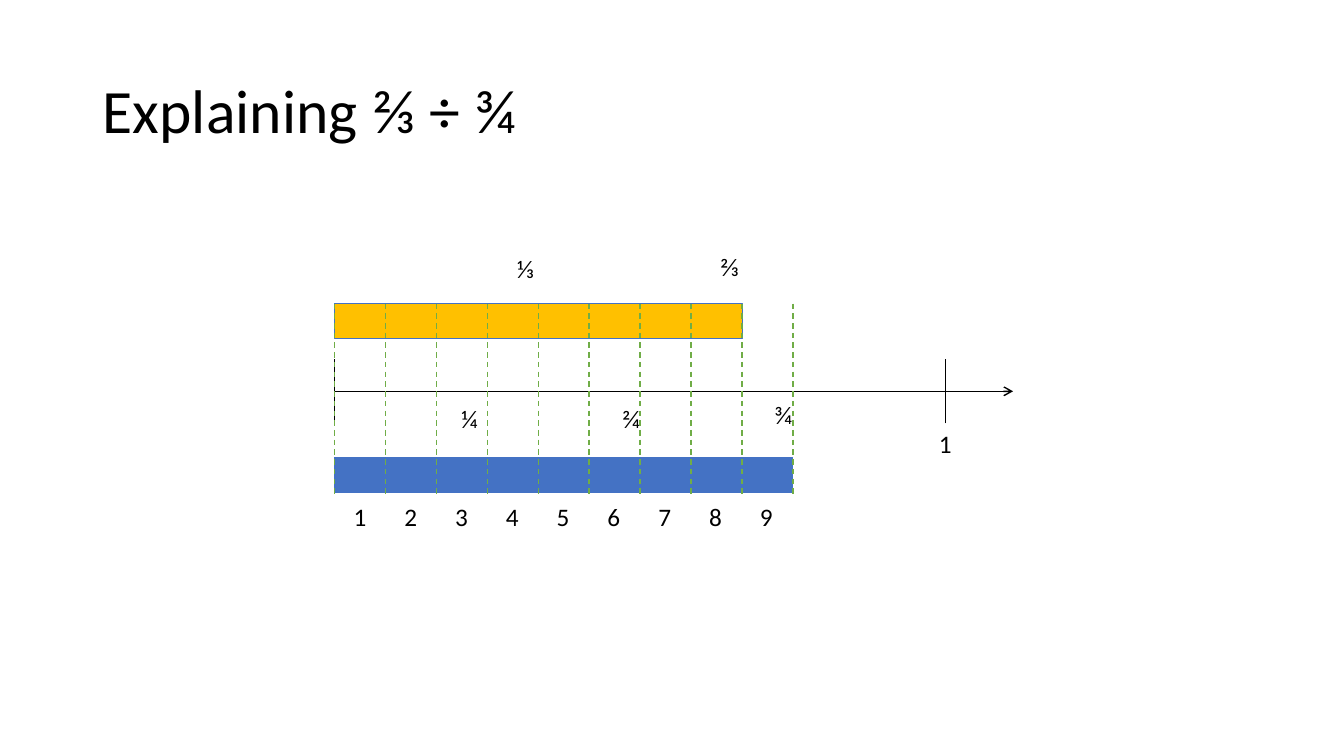
from dataclasses import dataclass

from pptx import Presentation
from pptx.dml.color import RGBColor
from pptx.enum.dml import MSO_LINE_DASH_STYLE as Dash
from pptx.enum.shapes import MSO_CONNECTOR as Connector, MSO_SHAPE as Shape
from pptx.enum.text import MSO_ANCHOR as Anchor, MSO_AUTO_SIZE as AutoSize, PP_ALIGN as Align
from pptx.oxml.ns import qn
from pptx.util import Cm, Pt
from lxml import etree


@dataclass(frozen=True)
class Theme:
    font: str = "Calibri"
    ink: str = "000000"
    dividend: str = "FFC000"
    divisor: str = "4472C4"
    guide: str = "70AD47"
    title_size: int = 44
    label_size: int = 18


class FractionSlide:
    def __init__(self, prs, theme):
        self.theme = theme
        self.slide = prs.slides.add_slide(prs.slide_layouts[5])
        self.shapes = self.slide.shapes

    def set_text(self, tf, text, size):
        tf.text = text
        p = tf.paragraphs[0]
        p.alignment = Align.LEFT
        for r in p.runs:
            r.font.name = self.theme.font
            r.font.size = Pt(size)
            r.font.color.rgb = RGBColor.from_string(self.theme.ink)
        return p

    def title(self, text, x, y, w, h):
        sp = self.shapes.title
        sp.left, sp.top, sp.width, sp.height = Cm(x), Cm(y), Cm(w), Cm(h)
        sp.text_frame.vertical_anchor = Anchor.MIDDLE
        p = self.set_text(sp.text_frame, text, self.theme.title_size)
        p.line_spacing = 0.9

    def label(self, text, x, y, w):
        sp = self.shapes.add_textbox(Cm(x), Cm(y), Cm(w), Cm(1.02))
        tf = sp.text_frame
        tf.word_wrap = False
        tf.auto_size = AutoSize.SHAPE_TO_FIT_TEXT
        self.set_text(tf, text, self.theme.label_size)

    def bar(self, x, y, w, h, color):
        sp = self.shapes.add_shape(Shape.RECTANGLE, Cm(x), Cm(y), Cm(w), Cm(h))
        sp.shadow.inherit = False
        sp.fill.solid()
        sp.fill.fore_color.rgb = RGBColor.from_string(color)
        sp.line.color.rgb = RGBColor.from_string(self.theme.divisor)
        sp.line.width = Pt(0.5)
        return sp

    def line(self, x1, y1, x2, y2, color, dashed=False, arrow=False):
        cxn = self.shapes.add_connector(Connector.STRAIGHT, Cm(x1), Cm(y1), Cm(x2), Cm(y2))
        cxn.line.color.rgb = RGBColor.from_string(color)
        cxn.line.width = Pt(1)
        if dashed:
            cxn.line.dash_style = Dash.DASH
        sp_pr = cxn._element.spPr
        if arrow:
            etree.SubElement(sp_pr.find(qn("a:ln")), qn("a:tailEnd"), type="arrow")
        etree.SubElement(sp_pr, qn("a:effectLst"))
        return cxn


def main():
    prs = Presentation()
    prs.slide_width, prs.slide_height = Cm(33.87), Cm(19.05)
    theme = Theme()
    s = FractionSlide(prs, theme)
    s.title("Explaining ⅔ ÷ ¾", 2.34, 1.02, 29.21, 3.68)

    # Number line from 0 to 1, split into twelfths
    zero, unit, axis_y = 8.43, 15.4, 9.86
    twelfth = unit / 12
    s.line(zero, axis_y, 25.53, axis_y, theme.ink, arrow=True)
    for x in (zero, zero + unit):
        s.line(x, axis_y + 0.81, x, axis_y - 0.81, theme.ink)
    s.label("1", zero + unit - 0.42, 10.67, 0.84)

    # Bars for two thirds and three quarters
    bar_top, bar_height = 7.65, 0.87
    dividend = s.bar(zero, bar_top, unit * 2 / 3, bar_height, theme.dividend)
    s.bar(zero, 11.53, unit * 3 / 4, bar_height, theme.divisor)

    # Fraction labels
    for text, x, y in (("1⁄3", 12.78, 6.25), ("2⁄3", 17.91, 6.2),
                       ("1⁄4", 11.38, 10.03), ("2⁄4", 15.44, 10.03),
                       ("3⁄4", 19.28, 9.93)):
        s.label(text, x, y, 1.37)

    # Guides at every twelfth; the fifth starts at the middle of the upper bar
    for i in range(10):
        x = zero + i * twelfth
        guide = s.line(x, bar_top, x, 12.45, theme.guide, dashed=True)
        if i == 4:
            guide.begin_connect(dividend, 0)

    # Count of the twelfths
    for i in range(9):
        s.label(str(i + 1), 8.66 + i * 1.28, 12.52, 0.84)

    prs.save("out.pptx")


if __name__ == "__main__":
    main()
